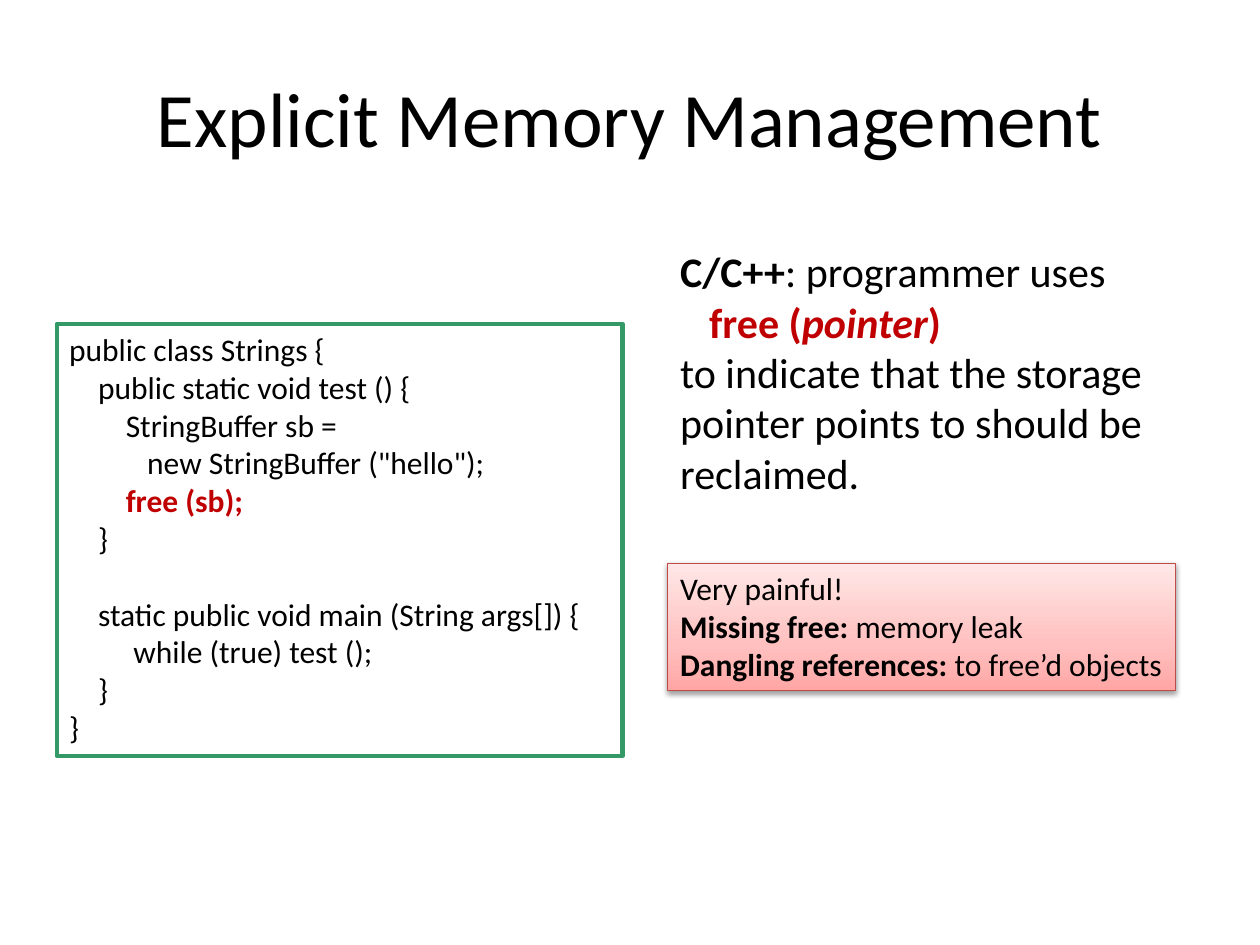
from copy import deepcopy

from lxml.etree import SubElement
from pptx import Presentation
from pptx.dml.color import RGBColor
from pptx.enum.shapes import MSO_SHAPE
from pptx.enum.text import MSO_ANCHOR, PP_ALIGN
from pptx.oxml.ns import qn
from pptx.util import Inches, Pt

BLACK = RGBColor(0x00, 0x00, 0x00)
RED = RGBColor(0xC0, 0x00, 0x00)
GREEN = RGBColor(0x33, 0x99, 0x66)
WARNING_LINE = RGBColor(0xBF, 0x4C, 0x48)
WARNING_STOPS = [
    (0, RGBColor(0xFF, 0xA6, 0xA5)),
    (0.35, RGBColor(0xFF, 0xC0, 0xBF)),
    (1, RGBColor(0xFF, 0xE7, 0xE7)),
]

PLAIN = {"bold": False, "italic": False}
BOLD = {"bold": True}
KEYWORD = {"bold": True, "color": RED}
ARGUMENT = {"bold": True, "italic": True, "color": RED}


def write_lines(shape, size, lines, wrap=True):
    frame = shape.text_frame
    frame.word_wrap = wrap
    for index, (indent, runs) in enumerate(lines):
        paragraph = frame.paragraphs[0] if index == 0 else frame.add_paragraph()
        paragraph.alignment = PP_ALIGN.LEFT
        paragraph._p.get_or_add_pPr().set("marL", str(Inches(indent)))
        for text, style in runs:
            run = paragraph.add_run()
            run.text = text
            values = {"name": "Calibri", "size": Pt(size), **PLAIN, **style}
            run.font.color.rgb = values.pop("color", BLACK)
            for name, value in values.items():
                setattr(run.font, name, value)


def add_box(left, top, width, height, line_color, line_width):
    shape = slide.shapes.add_shape(
        MSO_SHAPE.RECTANGLE, Inches(left), Inches(top), Inches(width), Inches(height)
    )
    shape.shadow.inherit = False
    shape.line.color.rgb = line_color
    shape.line.width = Pt(line_width)
    shape.text_frame.vertical_anchor = MSO_ANCHOR.TOP
    return shape


presentation = Presentation()
presentation.slide_width = Inches(10)
presentation.slide_height = Inches(7.5)
slide = presentation.slides.add_slide(presentation.slide_layouts[6])

title = slide.shapes.add_textbox(Inches(0.5), Inches(0.3), Inches(9), Inches(1.25))
write_lines(title, 44, [(0, [("Explicit Memory Management", PLAIN)])])
title.text_frame.vertical_anchor = MSO_ANCHOR.MIDDLE
title.text_frame.paragraphs[0].alignment = PP_ALIGN.CENTER

code_lines = [
    (0, "public class Strings {", PLAIN),
    (0.23, "public static void test () {", PLAIN),
    (0.45, "StringBuffer sb =", PLAIN),
    (0.62, 'new StringBuffer ("hello");', PLAIN),
    (0.45, "free (sb);", KEYWORD),
    (0.23, "}", PLAIN),
    (0.23, "static public void main (String args[]) {", PLAIN),
    (0.51, "while (true) test ();", PLAIN),
    (0.23, "}", PLAIN),
    (0, "}", PLAIN),
]
code_box = add_box(0.45, 2.57, 4.49, 3.43, GREEN, 2.5)
code_box.fill.background()
write_lines(code_box, 18, [(indent, [(text, style)]) for indent, text, style in code_lines])
code_box.text_frame.paragraphs[6].space_before = Pt(21.6)

explanation = slide.shapes.add_textbox(Inches(5.3), Inches(1.9), Inches(4.08), Inches(2.12))
write_lines(explanation, 24, [
    (0, [("C/C++", BOLD), (": programmer uses", PLAIN)]),
    (0.23, [("free (", KEYWORD), ("pointer", ARGUMENT), (")", KEYWORD)]),
    (0, [("to indicate that the storage pointer points to should be reclaimed.", PLAIN)]),
])

warning_box = add_box(5.3, 4.47, 4.03, 1.01, WARNING_LINE, 0.75)
warning_box.fill.gradient()
warning_box.fill.gradient_angle = 90
stop_list = warning_box._element.spPr.find(qn("a:gradFill")).find(qn("a:gsLst"))
stop_list.append(deepcopy(stop_list[0]))
for stop, (position, color) in zip(warning_box.fill.gradient_stops, WARNING_STOPS):
    stop.position = position
    stop.color.rgb = color

effects = warning_box._element.spPr.find(qn("a:effectLst"))
shadow = SubElement(effects, qn("a:outerShdw"), blurRad=str(Pt(3.1)), dist=str(Pt(1.6)),
                    dir="5400000", rotWithShape="0")
shadow_color = SubElement(shadow, qn("a:srgbClr"), val=str(BLACK))
SubElement(shadow_color, qn("a:alpha"), val="38000")

write_lines(warning_box, 18, [
    (0, [("Very painful!", PLAIN)]),
    (0, [("Missing free:", BOLD), (" memory leak", PLAIN)]),
    (0, [("Dangling references:", BOLD), (" to free’d objects", PLAIN)]),
], wrap=False)

presentation.save("out.pptx")
